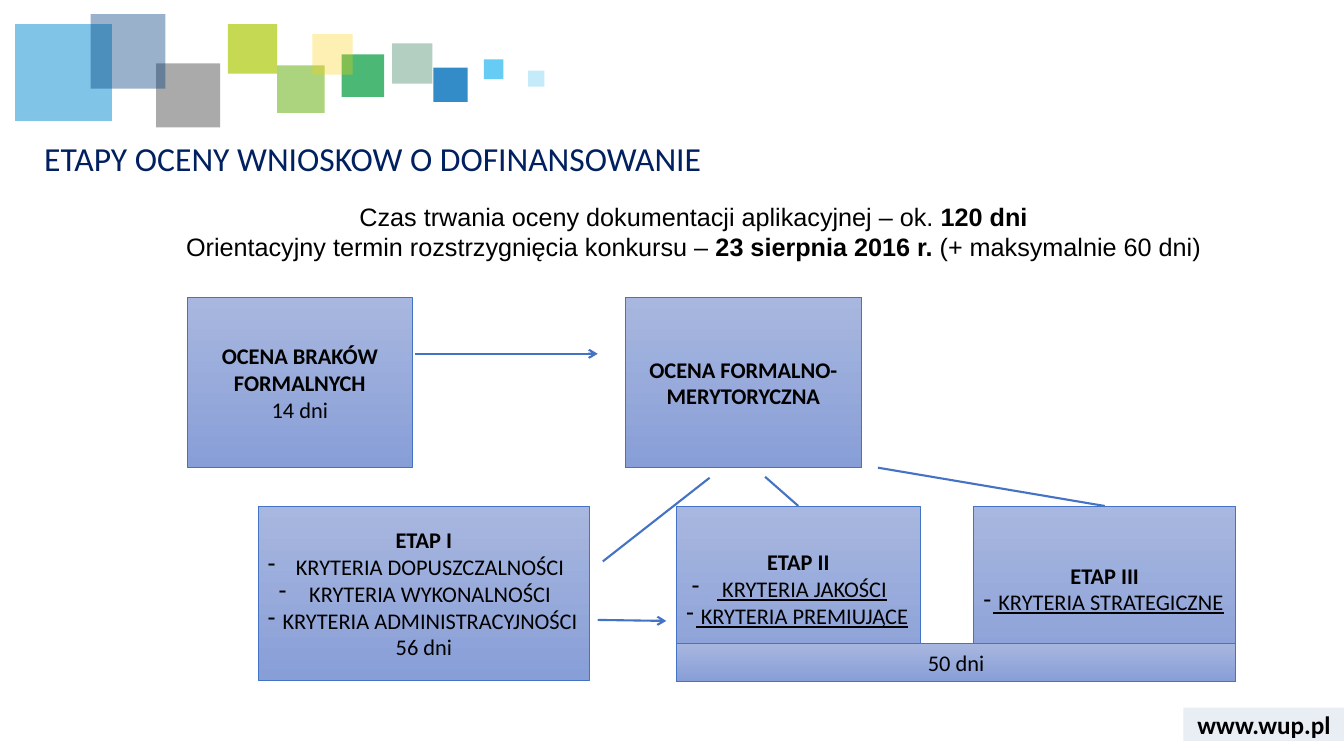
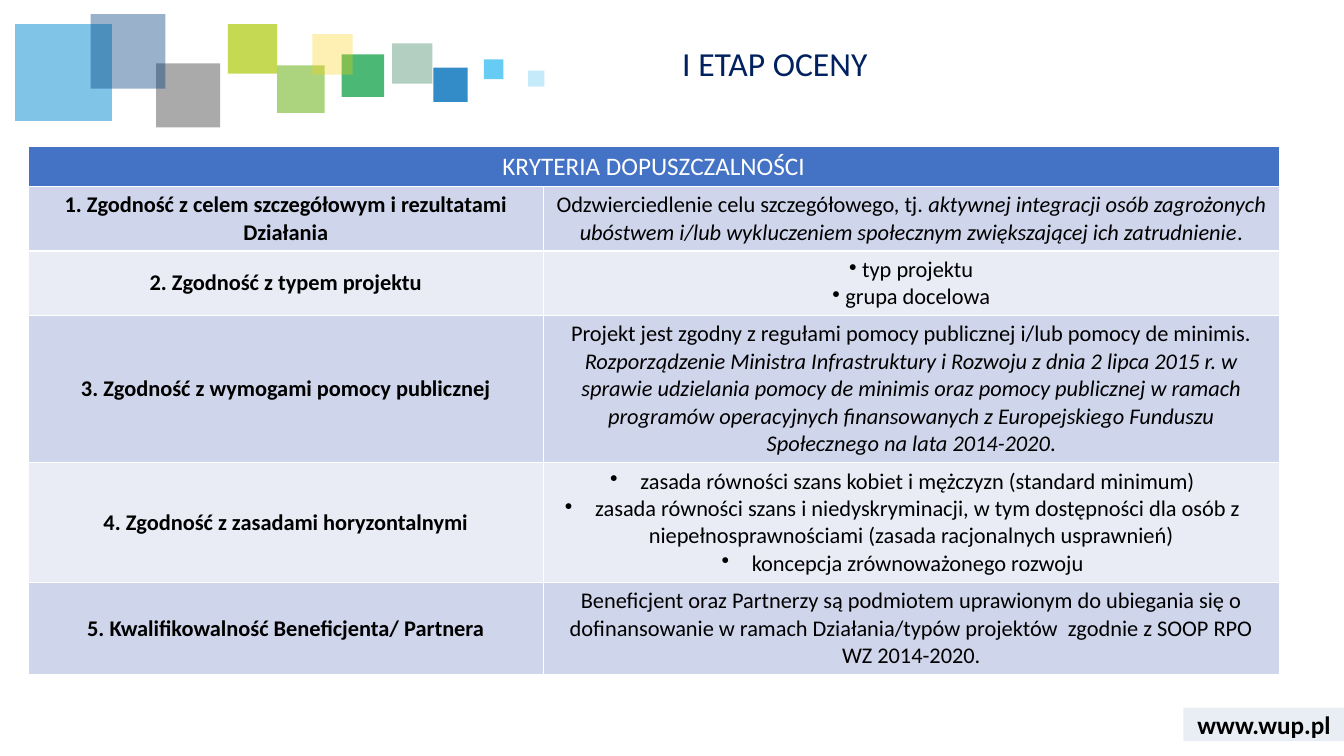
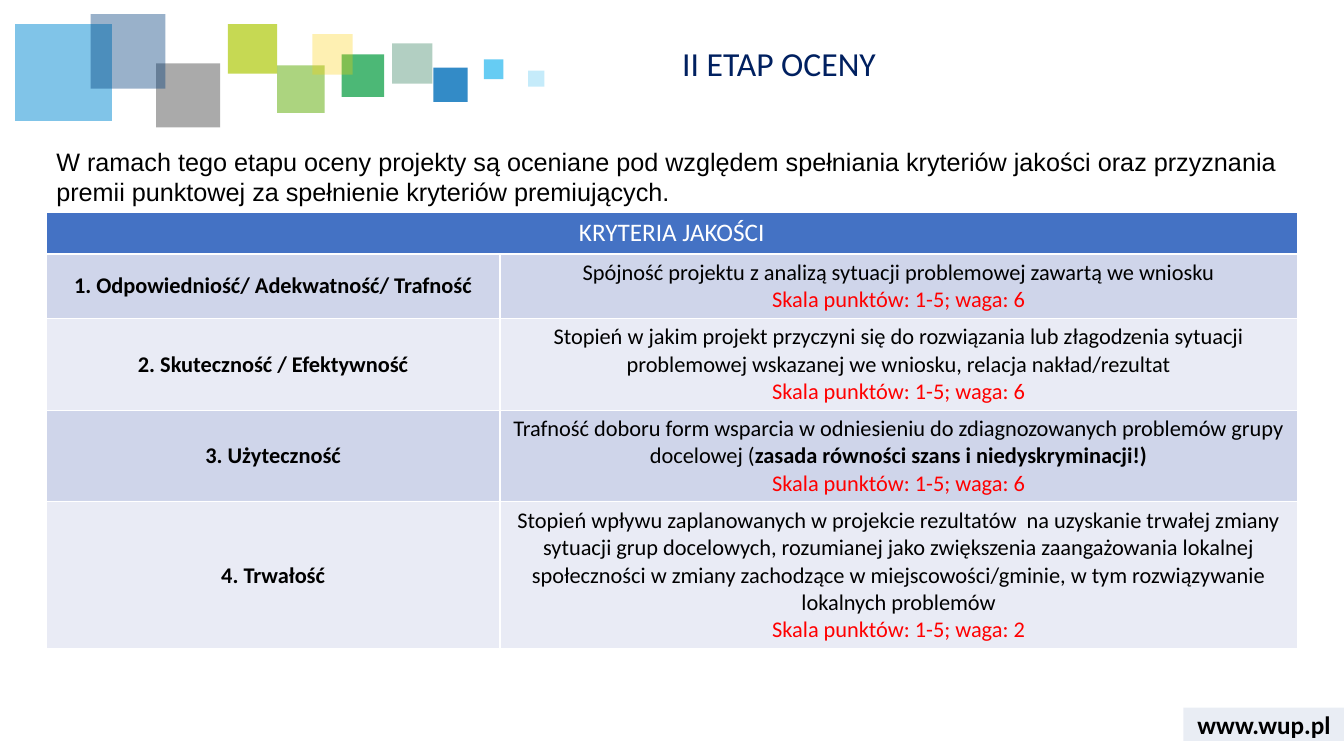
import dataclasses

import lxml.etree
import pptx
import pptx.dml.color
import pptx.enum.shapes
import pptx.enum.text
import pptx.oxml.ns
import pptx.util

COLOURS = {
    "black": "000000", "white": "FFFFFF", "navy": "002060", "red": "FF0000",
    "line": "4472C4", "node_top": "A8B7DF", "node_bottom": "889ED7",
    "odd_row": "CFD5EA", "even_row": "E9EBF5", "footer": "2F5597",
}
UNIT = pptx.util.Inches(0.1)
SLIDE_COLUMNS, SLIDE_ROWS = 133.33, 75
FOOTER_BOX = (117.4, 70.2, 16, 3.3)
HEADER_TITLE_BOX = (66.7, 4.2, 63.6, 5.5)
MOSAIC_BOX = (1.5, 1.4, 52.5, 11.3)
MOSAIC = [
    (37.4, 2.9, 4, "006138", 30), (41.5, 5.3, 3.4, "006EB9", 80),
    (32.4, 4, 4.2, "009A3C", 70), (0, 1, 9.6, "028BD3", 50),
    (26, 5.1, 4.7, "75B82A", 60), (14, 4.9, 6.35, "575757", 50),
    (7.5, 0, 7.4, "003D7C", 40), (46.5, 4.5, 1.95, "40C0F1", 80),
    (21.1, 1, 4.9, "AFCA0B", 70), (29.5, 2, 4, "FED000", 30),
    (50.9, 5.6, 1.6, "40C0F1", 30),
]
BODY = {"name": "Calibri", "size": pptx.util.Pt(16), "bold": False, "colour": COLOURS["black"]}
TITLE = BODY | {"size": pptx.util.Pt(24), "colour": COLOURS["navy"]}
TABLE_HEAD = BODY | {"size": pptx.util.Pt(18), "colour": COLOURS["white"]}
FOOTER = BODY | {"size": pptx.util.Pt(18), "bold": True}
LEAD = BODY | {"name": "Arial", "size": pptx.util.Pt(18)}
BOLD, ITALIC, UNDERLINE = {"bold": True}, {"italic": True}, {"underline": True}
RED = {"colour": COLOURS["red"]}
CENTER = pptx.enum.text.PP_ALIGN.CENTER
LEFT = pptx.enum.text.PP_ALIGN.LEFT
MIDDLE = pptx.enum.text.MSO_ANCHOR.MIDDLE
TOP = pptx.enum.text.MSO_ANCHOR.TOP


@dataclasses.dataclass
class Para:
    """One paragraph: spans of text and format, with an optional bullet."""
    spans: list
    bullet: str = ""
    margin: float = 0
    indent: float = -0.25


def plain(text, **style):
    """Return a paragraph of one span."""
    return Para([(text, style)])


def bulleted(text, bullet="•", margin=0, indent=-0.25, **style):
    """Return a bulleted paragraph of one span."""
    return Para([(text, style)], bullet, margin, indent)


def grid(*lengths):
    """Turn grid columns and rows into lengths."""
    return [round(length * UNIT) for length in lengths]


def rgb(value):
    """Turn a hex string into a colour."""
    return pptx.dml.color.RGBColor.from_string(value)


def inside(box, left, top):
    """Return a point given relative to a box."""
    return box[0] + left, box[1] + top


def write(frame, paras, base, align=CENTER, spacing=None):
    """Write paragraphs into a text frame."""
    for index, content in enumerate(paras):
        para = frame.paragraphs[0] if index == 0 else frame.add_paragraph()
        para.alignment = align
        if spacing:
            para.line_spacing = spacing
        if content.bullet:
            properties = para._p.get_or_add_pPr()
            properties.set("marL", str(pptx.util.Inches(content.margin)))
            properties.set("indent", str(pptx.util.Inches(content.indent)))
            mark = lxml.etree.SubElement(properties, pptx.oxml.ns.qn("a:buChar"))
            mark.set("char", content.bullet)
        for text, style in content.spans:
            span = para.add_run()
            span.text = text
            for key, value in (base | style).items():
                if key == "colour":
                    span.font.color.rgb = rgb(value)
                else:
                    setattr(span.font, key, value)


def add_text(slide, box, paras, base, align=LEFT, anchor=TOP, spacing=None):
    """Add a wrapping text box."""
    frame = slide.shapes.add_textbox(*grid(*box)).text_frame
    frame.word_wrap = True
    frame.vertical_anchor = anchor
    write(frame, paras, base, align, spacing)


def add_title(slide, box, text):
    """Add a slide title."""
    add_text(slide, box, [plain(text)], TITLE, spacing=0.9)


def add_rectangle(slide, box):
    """Add a rectangle without shadow."""
    shape = slide.shapes.add_shape(pptx.enum.shapes.MSO_SHAPE.RECTANGLE, *grid(*box))
    shape.shadow.inherit = False
    return shape


def add_tint(slide, box, colour, percent):
    """Add a see-through rectangle without outline."""
    shape = add_rectangle(slide, box)
    shape.fill.solid()
    shape.fill.fore_color.rgb = rgb(colour)
    shape.line.fill.background()
    fill = shape._element.spPr.find(pptx.oxml.ns.qn("a:solidFill"))
    alpha = lxml.etree.SubElement(fill[0], pptx.oxml.ns.qn("a:alpha"))
    alpha.set("val", str(percent * 1000))


def add_mosaic(slide, box):
    """Place the coloured squares of the header."""
    for left, top, side, colour, percent in MOSAIC:
        add_tint(slide, (*inside(box, left, top), side, side), colour, percent)


def add_footer(slide, box):
    """Place the web address on its tinted band."""
    add_tint(slide, box, COLOURS["footer"], 10)
    add_text(slide, box, [plain("www.wup.pl")], FOOTER, CENTER, MIDDLE)


def add_slide(deck):
    """Add a blank slide with the shared header and footer."""
    slide = deck.slides.add_slide(deck.slide_layouts[6])
    add_mosaic(slide, MOSAIC_BOX)
    add_footer(slide, FOOTER_BOX)
    return slide


def add_node(slide, box, paras, bottom=0.05):
    """Add a gradient box of the flow."""
    node = add_rectangle(slide, box)
    node.fill.gradient()
    node.fill.gradient_angle = 270
    for stop, name in zip(node.fill.gradient_stops, ("node_top", "node_bottom")):
        stop.color.rgb = rgb(COLOURS[name])
    node.line.color.rgb = rgb(COLOURS["line"])
    node.line.width = pptx.util.Pt(0.5)
    node.text_frame.word_wrap = True
    node.text_frame.vertical_anchor = MIDDLE
    node.text_frame.margin_bottom = pptx.util.Inches(bottom)
    write(node.text_frame, paras, BODY)
    return node


def add_link(slide, start, end, arrow=False, target=None):
    """Add a line, with an arrowhead or joined to the top of a node."""
    link = slide.shapes.add_connector(
        pptx.enum.shapes.MSO_CONNECTOR.STRAIGHT, *grid(*start, *end))
    link.line.color.rgb = rgb(COLOURS["line"])
    link.line.width = pptx.util.Pt(1.5)
    if arrow:
        tail = lxml.etree.SubElement(
            link.line._get_or_add_ln(), pptx.oxml.ns.qn("a:tailEnd"))
        tail.set("type", "arrow")
    lxml.etree.SubElement(link._element.spPr, pptx.oxml.ns.qn("a:effectLst"))
    if target:
        link.end_connect(target, 0)


def add_flow(slide, box):
    """Draw the assessment stages and their links."""
    stage_row = 20.7

    def node(left, top, width, height, paras, **options):
        """Add a node relative to the flow."""
        return add_node(slide, (*inside(box, left, top), width, height), paras, **options)

    def link(start, end, **options):
        """Add a link relative to the flow."""
        add_link(slide, inside(box, *start), inside(box, *end), **options)

    node(0, 0, 22.3, 16.9, [plain("OCENA BRAKÓW FORMALNYCH", **BOLD), plain("14 dni")])
    node(43.4, 0, 23.5, 16.9, [plain("OCENA FORMALNO-MERYTORYCZNA", **BOLD)])
    node(7, stage_row, 32.9, 17.3, [
        plain("ETAP I", **BOLD),
        bulleted(" KRYTERIA DOPUSZCZALNOŚCI", "-"),
        bulleted(" KRYTERIA WYKONALNOŚCI", "-"),
        bulleted(" KRYTERIA ADMINISTRACYJNOŚCI", "-"),
        plain("56 dni"),
    ])
    second = node(48.5, stage_row, 24.2, 17.4, [
        plain("ETAP II", **BOLD),
        bulleted(" KRYTERIA JAKOŚCI", "-", **UNDERLINE),
        bulleted(" KRYTERIA PREMIUJĄCE", "-", **UNDERLINE),
    ], bottom=0.15)
    third = node(78, stage_row, 26, 17.4, [
        plain("ETAP III", **BOLD),
        bulleted(" KRYTERIA STRATEGICZNE", "-", **UNDERLINE),
    ], bottom=0.15)
    node(48.5, 34.3, 55.5, 3.8, [plain("50 dni")])
    link((22.6, 5.6), (40.7, 5.6), arrow=True)
    link((40.7, 32), (47.5, 32.1), arrow=True)
    link((51.8, 17.9), (41.2, 26.2))
    link((57.3, 17.8), (60.6, stage_row), target=second)
    link((68.5, 16.9), (91, stage_row), target=third)


def add_criteria(slide, box, first_column, row_heights, heading, criteria, anchor):
    """Add a criteria table with a merged heading row."""
    size = (box[2], sum(row_heights))
    table = slide.shapes.add_table(len(row_heights), 2, *grid(*box[:2], *size)).table
    for column, width in zip(table.columns, grid(first_column, box[2] - first_column)):
        column.width = width
    for row, height in zip(table.rows, grid(*row_heights)):
        row.height = height
    head = table.cell(0, 0)
    head.merge(table.cell(0, 1))
    head.fill.solid()
    head.fill.fore_color.rgb = rgb(COLOURS["line"])
    write(head.text_frame, [plain(heading)], TABLE_HEAD)
    for number, (name, paras) in enumerate(criteria, 1):
        shade = COLOURS["odd_row" if number % 2 else "even_row"]
        contents = ([plain(f"{number}. {name}", **BOLD)], MIDDLE), (paras, anchor)
        for column, (content, position) in enumerate(contents):
            cell = table.cell(number, column)
            cell.fill.solid()
            cell.fill.fore_color.rgb = rgb(shade)
            cell.vertical_anchor = position
            write(cell.text_frame, content, BODY)


def scale(weight):
    """Return the red line with the point scale."""
    return plain(f"Skala punktów: 1-5; waga: {weight}", **RED)


def build_stages(deck):
    """Build the slide of assessment stages."""
    slide = add_slide(deck)
    add_title(slide, (3.4, 13.6, 124.1, 5.5), "ETAPY OCENY WNIOSKOW O DOFINANSOWANIE")
    add_text(slide, (10.1, 19.5, 117.4, 7.1), [
        Para([("Czas trwania oceny dokumentacji aplikacyjnej – ok. ", {}), ("120 dni", BOLD)]),
        Para([("Orientacyjny termin rozstrzygnięcia konkursu – ", {}),
              ("23 sierpnia 2016 r. ", BOLD), ("(+ maksymalnie 60 dni)", {})]),
    ], LEAD, CENTER)
    add_flow(slide, (18.6, 29.5, 104, 38.1))


def build_admissibility(deck):
    """Build the slide of admissibility criteria."""
    slide = add_slide(deck)
    criteria = [
        ("Zgodność z celem szczegółowym i rezultatami Działania", [Para([
            ("Odzwierciedlenie celu szczegółowego, tj. ", {}),
            ("aktywnej integracji osób zagrożonych ubóstwem i/lub wykluczeniem "
             "społecznym zwiększającej ich zatrudnienie", ITALIC),
            (".", {})])]),
        ("Zgodność z typem projektu", [
            bulleted(" typ projektu", margin=0.02, indent=-0.02),
            bulleted(" grupa docelowa", margin=0.02, indent=-0.02)]),
        ("Zgodność z wymogami pomocy publicznej", [Para([
            ("Projekt jest zgodny z regułami pomocy publicznej i/lub pomocy de minimis. ", {}),
            ("Rozporządzenie Ministra Infrastruktury i Rozwoju z dnia 2 lipca 2015 r. "
             "w sprawie udzielania pomocy de minimis oraz pomocy publicznej w ramach "
             "programów operacyjnych finansowanych z Europejskiego Funduszu "
             "Społecznego na lata 2014-2020", ITALIC),
            (".", {})])]),
        ("Zgodność z zasadami horyzontalnymi", [
            bulleted(" zasada równości szans kobiet i mężczyzn (standard minimum)"),
            bulleted(" zasada równości szans i niedyskryminacji, w tym dostępności dla osób "
                     "z niepełnosprawnościami (zasada racjonalnych usprawnień)"),
            bulleted(" koncepcja zrównoważonego rozwoju")]),
        ("Kwalifikowalność Beneficjenta/ Partnera", [plain(
            "Beneficjent oraz Partnerzy są podmiotem uprawionym do ubiegania się "
            "o dofinansowanie w ramach Działania/typów projektów  zgodnie z SOOP "
            "RPO WZ 2014-2020.")]),
    ]
    add_criteria(slide, (2.8, 14.5, 124.1), 51.1, [4, 6.4, 6.4, 14.6, 11.9, 9.1],
                 "KRYTERIA DOPUSZCZALNOŚCI", criteria, MIDDLE)
    add_title(slide, HEADER_TITLE_BOX, "I ETAP OCENY")


def build_quality(deck):
    """Build the slide of quality criteria."""
    slide = add_slide(deck)
    criteria = [
        ("Odpowiedniość/ Adekwatność/ Trafność", [
            plain("Spójność projektu z analizą sytuacji problemowej zawartą we wniosku"),
            scale(6)]),
        ("Skuteczność / Efektywność", [
            plain("Stopień w jakim projekt przyczyni się do rozwiązania lub złagodzenia "
                  "sytuacji problemowej wskazanej we wniosku, relacja nakład/rezultat"),
            scale(6)]),
        ("Użyteczność", [
            Para([("Trafność doboru form wsparcia w odniesieniu do zdiagnozowanych "
                   "problemów grupy docelowej (", {}),
                  ("zasada równości szans i niedyskryminacji!)", BOLD)]),
            scale(6)]),
        ("Trwałość", [
            plain("Stopień wpływu zaplanowanych w projekcie rezultatów  na uzyskanie trwałej "
                  "zmiany sytuacji grup docelowych, rozumianej jako zwiększenia "
                  "zaangażowania lokalnej społeczności w zmiany zachodzące w "
                  "miejscowości/gminie, w tym rozwiązywanie lokalnych problemów"),
            scale(2)]),
    ]
    add_criteria(slide, (4.6, 21.1, 124.1), 45, [4.1, 6.4, 9.1, 9.1, 14.6],
                 "KRYTERIA JAKOŚCI", criteria, TOP)
    add_text(slide, (4.6, 14, 124.1, 7.1), [plain(
        "W ramach tego etapu oceny projekty są oceniane pod względem spełniania kryteriów "
        "jakości oraz przyznania premii punktowej za spełnienie kryteriów premiujących.")], LEAD)
    add_title(slide, HEADER_TITLE_BOX, "II ETAP OCENY")


def main():
    """Build and save the deck."""
    deck = pptx.Presentation()
    deck.slide_width, deck.slide_height = grid(SLIDE_COLUMNS, SLIDE_ROWS)
    for build in (build_stages, build_admissibility, build_quality):
        build(deck)
    deck.save("out.pptx")


if __name__ == "__main__":
    main()
